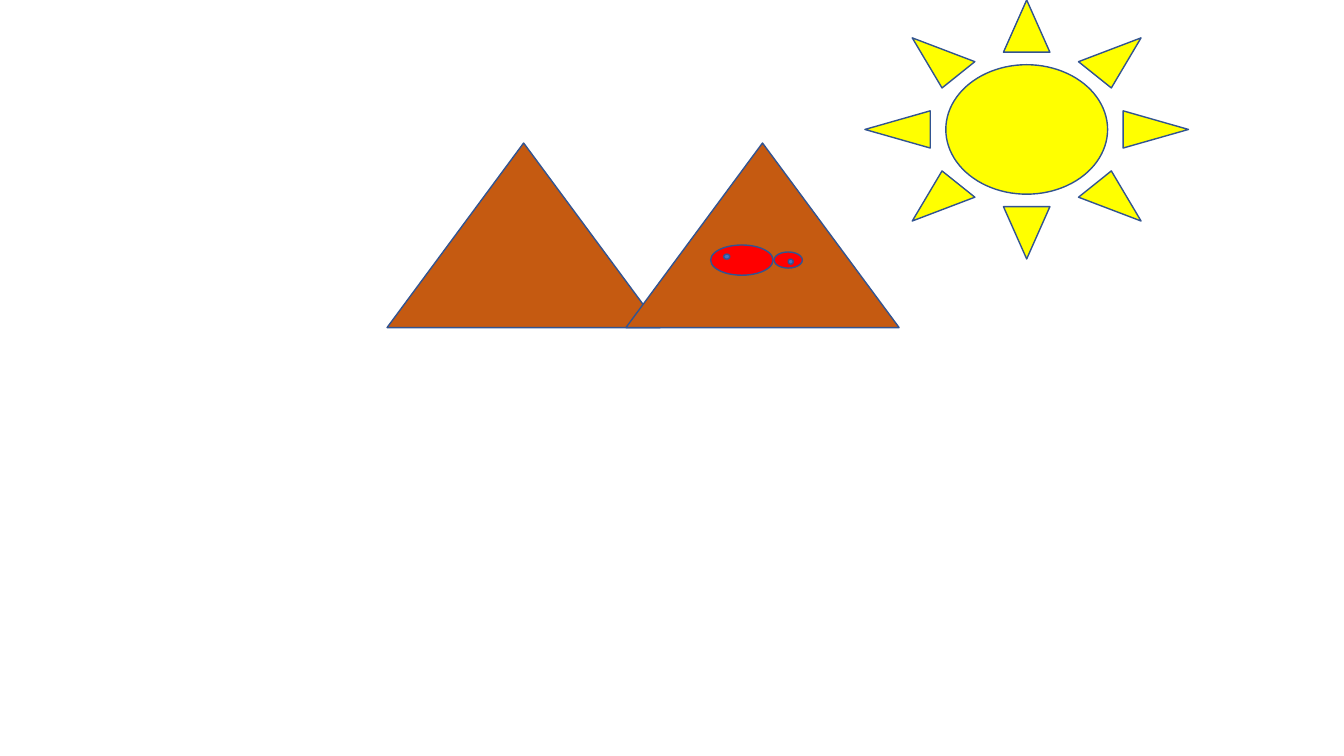
"""Draw a sun, two hills and a red fish on a blank slide."""
import pptx
import pptx.dml.color
import pptx.enum.shapes
import pptx.util

Pt = pptx.util.Pt
RGB = pptx.dml.color.RGBColor
KIND = pptx.enum.shapes.MSO_SHAPE

YELLOW = RGB(0xFF, 0xFF, 0x00)
BROWN = RGB(0xC5, 0x5A, 0x11)
RED = RGB(0xFF, 0x00, 0x00)
BLUE = RGB(0x44, 0x72, 0xC4)
EDGE = RGB(0x32, 0x54, 0x91)


def shape(slide, kind, box, color):
    part = slide.shapes.add_shape(kind, *map(Pt, box))
    part.shadow.inherit = False
    part.fill.solid()
    part.line.fill.solid()
    formats = {
        part.fill.fore_color: {"rgb": color},
        part.line.color: {"rgb": EDGE},
        part.line: {"width": Pt(1)},
    }
    for target, values in formats.items():
        for name, value in values.items():
            setattr(target, name, value)


def sun(slide, box):
    shape(slide, KIND.SUN, box, YELLOW)


def hills(slide, box):
    left, top, width, height = box
    base = 195.1
    for x in (left, left + width - base):
        shape(slide, KIND.ISOSCELES_TRIANGLE, (x, top, base, height), BROWN)


def fish(slide, box):
    left, top, width, height = box
    tail = 20.2
    body = (0, 0, 44.6, height)
    fin = (width - tail, 5, tail, 11.5)
    shape(slide, KIND.OVAL, (left, top, *body[2:]), RED)
    dots = (
        (fin, RED),
        ((55.4, 10.1, 3.6, 3.6), BLUE),
        ((9.4, 6.5, 4.3, 3.6), BLUE),
    )
    for (x, y, wide, high), color in dots:
        spot = (left + x, top + y, wide, high)
        shape(slide, KIND.FLOWCHART_CONNECTOR, spot, color)


def main():
    deck = pptx.Presentation()
    deck.slide_width, deck.slide_height = Pt(960), Pt(540)
    slide = deck.slides.add_slide(deck.slide_layouts[6])
    sun(slide, (617.8, 0, 231.1, 185))
    hills(slide, (276.5, 102.2, 365.7, 131.8))
    fish(slide, (507.6, 175, 65.5, 21.6))
    deck.save("out.pptx")


if __name__ == "__main__":
    main()
